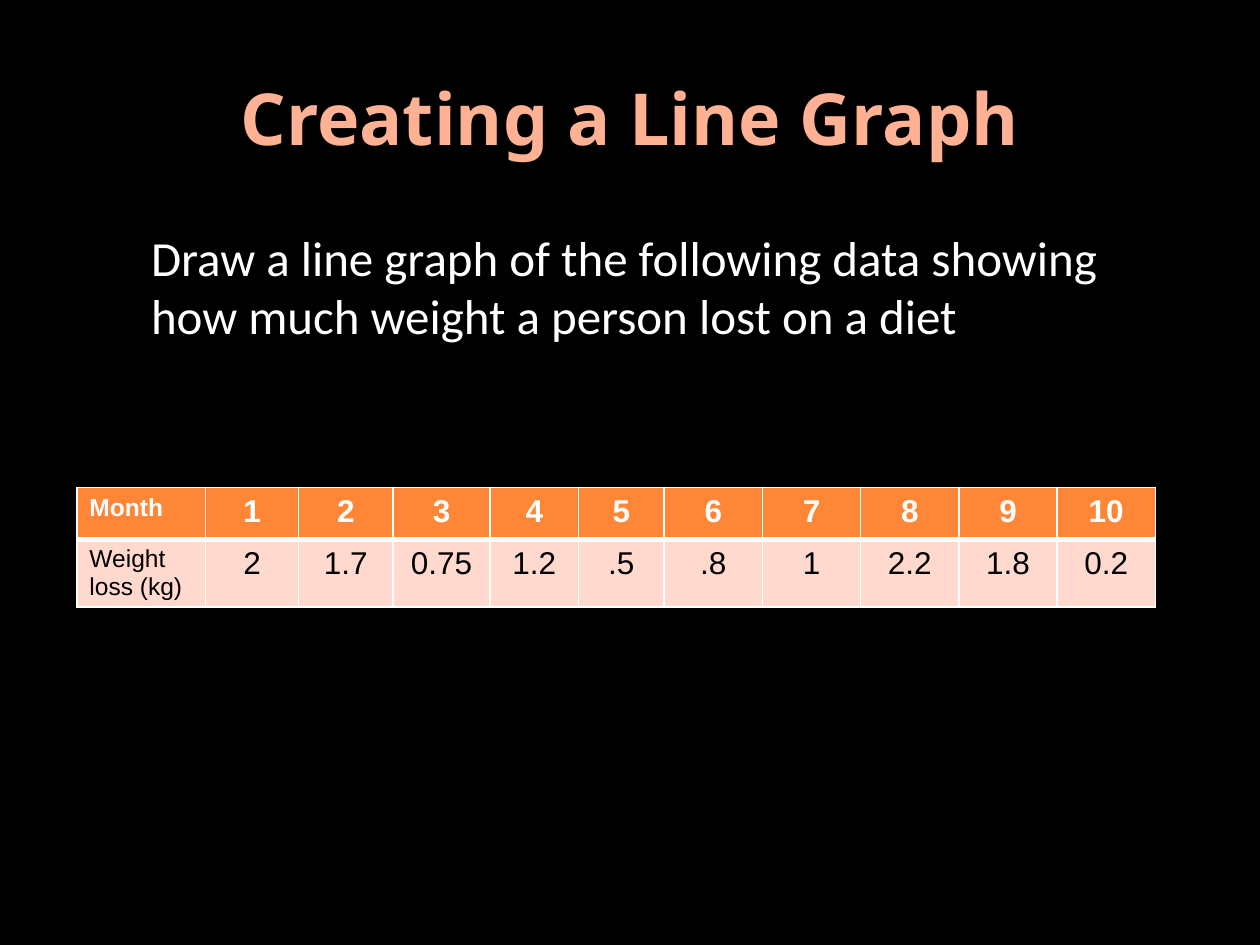
"""Build a slide that asks for a line graph of monthly weight loss."""
from lxml import etree
from pptx import Presentation
from pptx.dml.color import RGBColor
from pptx.enum.text import MSO_ANCHOR, MSO_AUTO_SIZE, PP_ALIGN
from pptx.oxml import parse_xml
from pptx.oxml.ns import nsdecls, qn
from pptx.util import Cm, Pt

CENTER, LEFT = PP_ALIGN.CENTER, PP_ALIGN.LEFT
MIDDLE, TOP = MSO_ANCHOR.MIDDLE, MSO_ANCHOR.TOP
NO_AUTOFIT = MSO_AUTO_SIZE.NONE
BLACK = RGBColor(0x00, 0x00, 0x00)
WHITE = RGBColor(0xFF, 0xFF, 0xFF)
PEACH = RGBColor(0xFF, 0xB1, 0x94)
ORANGE = RGBColor(0xFE, 0x86, 0x37)
PALE_PINK = RGBColor(0xFF, 0xD9, 0xCE)

ROWS = [
    ["Month", "1", "2", "3", "4", "5", "6", "7", "8", "9", "10"],
    ["Weight loss (kg)", "2", "1.7", "0.75", "1.2", ".5", ".8", "1", "2.2", "1.8", "0.2"],
]
COLUMN_WIDTHS = [2.59, 1.88, 1.9, 1.96, 1.78, 1.73] + [1.98] * 5
ROW_HEIGHTS = [1.04, 1.35]
ROW_STYLES = [
    (ORANGE, WHITE, True, {"L": 1, "R": 1, "T": 1, "B": 3}),
    (PALE_PINK, BLACK, False, {"L": 1, "R": 1, "T": 3, "B": 1}),
]


def format_text(text_frame, font_name, size, color, bold, alignment):
    paragraph = text_frame.paragraphs[0]
    paragraph.alignment = alignment
    font = paragraph.runs[0].font
    font.name, font.size, font.bold = font_name, Pt(size), bold
    font.color.rgb = color


def set_borders(cell, widths, color):
    properties = cell._tc.get_or_add_tcPr()
    for position, (side, width) in enumerate(widths.items()):
        properties.insert(position, parse_xml(
            f'<a:ln{side} {nsdecls("a")} w="{Pt(width)}"><a:solidFill>'
            f'<a:srgbClr val="{color}"/></a:solidFill></a:ln{side}>'))


presentation = Presentation()
presentation.slide_width, presentation.slide_height = Cm(25.4), Cm(19.05)
slide = presentation.slides.add_slide(presentation.slide_layouts[1])
slide.background.fill.solid()
slide.background.fill.fore_color.rgb = BLACK

title, body = slide.placeholders
title.left, title.top, title.width, title.height = Cm(1.27), Cm(0.76), Cm(22.86), Cm(3.18)
title.text_frame.text = "Creating a Line Graph"
title.text_frame.vertical_anchor = MIDDLE
title.text_frame.auto_size = NO_AUTOFIT
format_text(title.text_frame, "Noto Sans", 41, PEACH, True, CENTER)

body.left, body.top, body.width, body.height = Cm(1.27), Cm(4.45), Cm(22.86), Cm(13.08)
body.text_frame.text = (
    "Draw a line graph of the following data showing how much weight a person lost on a diet")
body.text_frame.vertical_anchor = TOP
body.text_frame.auto_size = NO_AUTOFIT
format_text(body.text_frame, "Calibri", 28, WHITE, False, LEFT)
body_properties = body.text_frame.paragraphs[0]._p.get_or_add_pPr()
body_properties.set("marL", str(Cm(1.52)))
body_properties.set("indent", "0")
etree.SubElement(body_properties, qn("a:buNone"))

table = slide.shapes.add_table(
    len(ROWS), len(COLUMN_WIDTHS), Cm(1.55), Cm(9.83),
    Cm(sum(COLUMN_WIDTHS)), Cm(sum(ROW_HEIGHTS))).table
for column, width in zip(table.columns, COLUMN_WIDTHS):
    column.width = Cm(width)
for row, height, values, style in zip(table.rows, ROW_HEIGHTS, ROWS, ROW_STYLES):
    row.height = Cm(height)
    fill_color, text_color, bold, border_widths = style
    for index, (cell, value) in enumerate(zip(row.cells, values)):
        size, alignment = (18, CENTER) if index else (14, LEFT)
        cell.text_frame.text = value
        format_text(cell.text_frame, "Arial", size, text_color, bold, alignment)
        cell.fill.solid()
        cell.fill.fore_color.rgb = fill_color
        set_borders(cell, border_widths, WHITE)

presentation.save("out.pptx")
